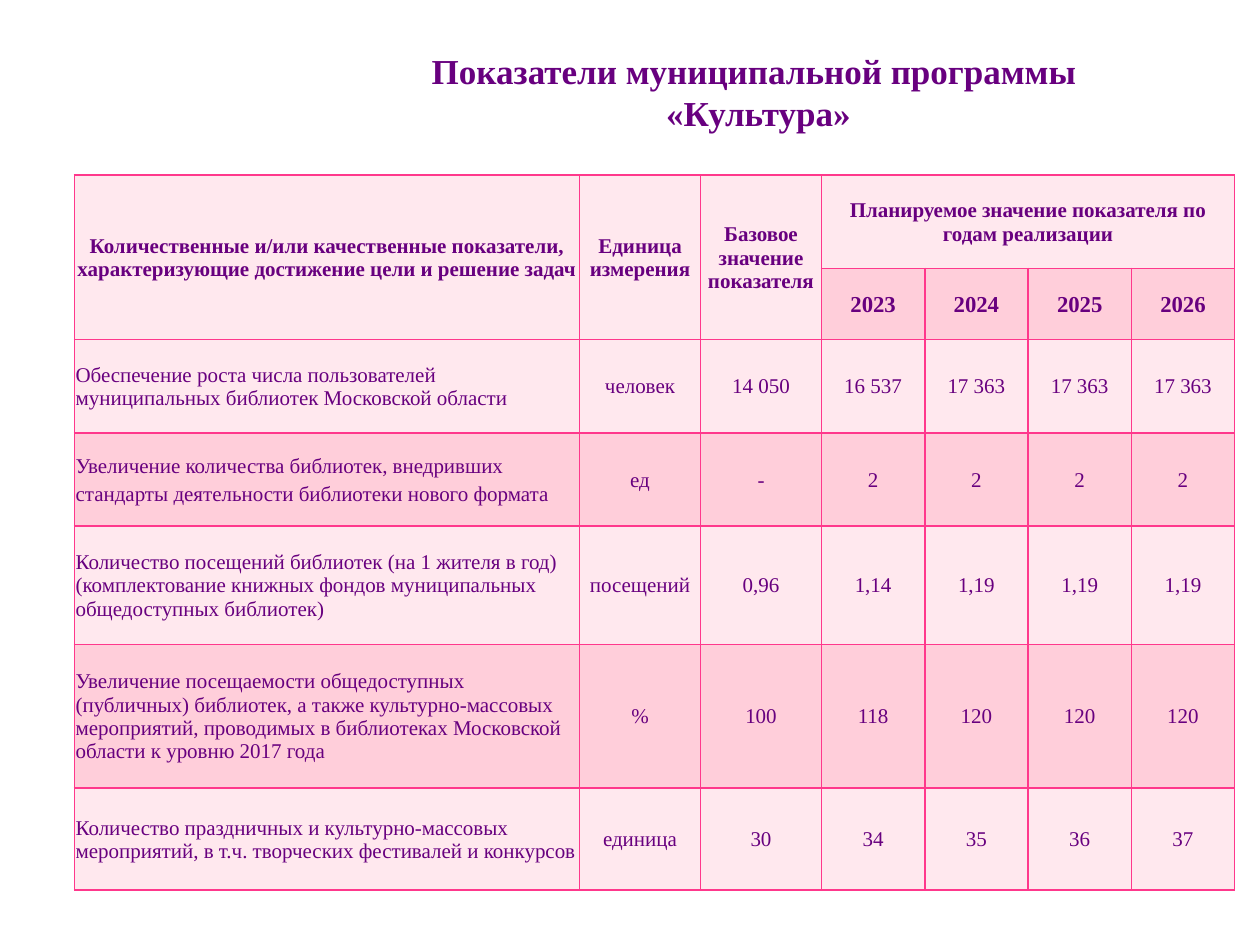
from dataclasses import dataclass

from lxml import etree
from pptx import Presentation
from pptx import util as u
from pptx.dml.color import RGBColor
from pptx.enum import text
from pptx.oxml.ns import qn

TITLE = "Показатели муниципальной программы\v «Культура»"
HEADINGS = [
    "Количественные и/или качественные показатели, характеризующие достижение цели и решение задач",
    "Единица измерения",
    "Базовое значение показателя",
    "Планируемое значение показателя по годам реализации",
]
YEARS = ["2023", "2024", "2025", "2026"]
INDICATORS = [
    ["Обеспечение роста числа пользователей муниципальных библиотек Московской области",
     "человек", "14 050", "16 537", "17 363", "17 363", "17 363"],
    ["Увеличение количества библиотек, внедривших\nстандарты деятельности библиотеки нового формата",
     "ед", "-", "2", "2", "2", "2"],
    ["Количество посещений библиотек (на 1 жителя в год) (комплектование книжных фондов "
     "муниципальных общедоступных библиотек)",
     "посещений", "0,96", "1,14", "1,19", "1,19", "1,19"],
    ["Увеличение посещаемости общедоступных (публичных) библиотек, а также культурно-массовых "
     "мероприятий, проводимых в библиотеках Московской области к уровню 2017 года",
     "%", "100", "118", "120", "120", "120"],
    ["Количество праздничных и культурно-массовых мероприятий, в т.ч. творческих фестивалей и конкурсов",
     "единица", "30", "34", "35", "36", "37"],
]
COLUMNS = [4.01, 0.96, 0.96] + [0.82] * len(YEARS)
ROWS = [0.74, 0.53, 0.74, 0.74, 0.94, 1.14, 0.81]


@dataclass(frozen=True)
class Theme:
    font: str = "Times New Roman"
    ink: str = "68007F"
    border: str = "FF388C"
    bands: tuple = ("FFE8EE", "FFCEDA")
    title: int = 20
    year: int = 13
    body: int = 12
    gap: float = 2.7


THEME = Theme()


def write(frame, content, size=THEME.body, bold=False, align=text.PP_ALIGN.CENTER):
    frame.text = content
    frame.word_wrap = True
    for index, para in enumerate(frame.paragraphs):
        para.alignment = align
        para.space_before = u.Pt(THEME.gap if index else 0)
        for span in para.runs:
            span.font.name = THEME.font
            span.font.size = u.Pt(size)
            span.font.bold = bold
            span.font.color.rgb = RGBColor.from_string(THEME.ink)


def style_cell(cell, color):
    cell.vertical_anchor = text.MSO_ANCHOR.MIDDLE
    cell.margin_left = cell.margin_right = cell.margin_top = u.Inches(0.01)
    cell.margin_bottom = 0
    cell.fill.solid()
    cell.fill.fore_color.rgb = RGBColor.from_string(color)
    properties = cell._tc.get_or_add_tcPr()
    for index, side in enumerate(("a:lnL", "a:lnR", "a:lnT", "a:lnB")):
        line = etree.Element(qn(side), w=str(u.Pt(1)))
        fill = etree.SubElement(line, qn("a:solidFill"))
        etree.SubElement(fill, qn("a:srgbClr"), val=THEME.border)
        properties.insert(index, line)


def add_title(page):
    box = page.shapes.title
    box.left, box.top, box.width, box.height = map(u.Inches, (1.85, 0.29, 8.27, 0.87))
    box.text_frame.vertical_anchor = text.MSO_ANCHOR.MIDDLE
    write(box.text_frame, TITLE, size=THEME.title, bold=True)


def add_indicators(page):
    table = page.shapes.add_table(
        len(ROWS), len(COLUMNS), u.Inches(0.59), u.Inches(1.39),
        u.Inches(sum(COLUMNS)), u.Inches(sum(ROWS))).table
    for column, width in zip(table.columns, COLUMNS):
        column.width = u.Inches(width)
    for row, height in zip(table.rows, ROWS):
        row.height = u.Inches(height)

    for row in range(len(ROWS)):
        for column in range(len(COLUMNS)):
            style_cell(table.cell(row, column), THEME.bands[row % 2])

    first_year = len(COLUMNS) - len(YEARS)
    for column in range(first_year):
        table.cell(0, column).merge(table.cell(1, column))
    table.cell(0, first_year).merge(table.cell(0, len(COLUMNS) - 1))

    for column, heading in enumerate(HEADINGS):
        write(table.cell(0, column).text_frame, heading, bold=True)
    for column, year in enumerate(YEARS, first_year):
        write(table.cell(1, column).text_frame, year, size=THEME.year, bold=True)
    for row, values in enumerate(INDICATORS, 2):
        for column, value in enumerate(values):
            align = text.PP_ALIGN.CENTER if column else text.PP_ALIGN.LEFT
            write(table.cell(row, column).text_frame, value, align=align)


def main():
    deck = Presentation()
    deck.slide_width, deck.slide_height = u.Inches(10), u.Inches(7.5)
    page = deck.slides.add_slide(deck.slide_layouts[5])
    add_title(page)
    add_indicators(page)
    deck.save("out.pptx")


if __name__ == "__main__":
    main()
